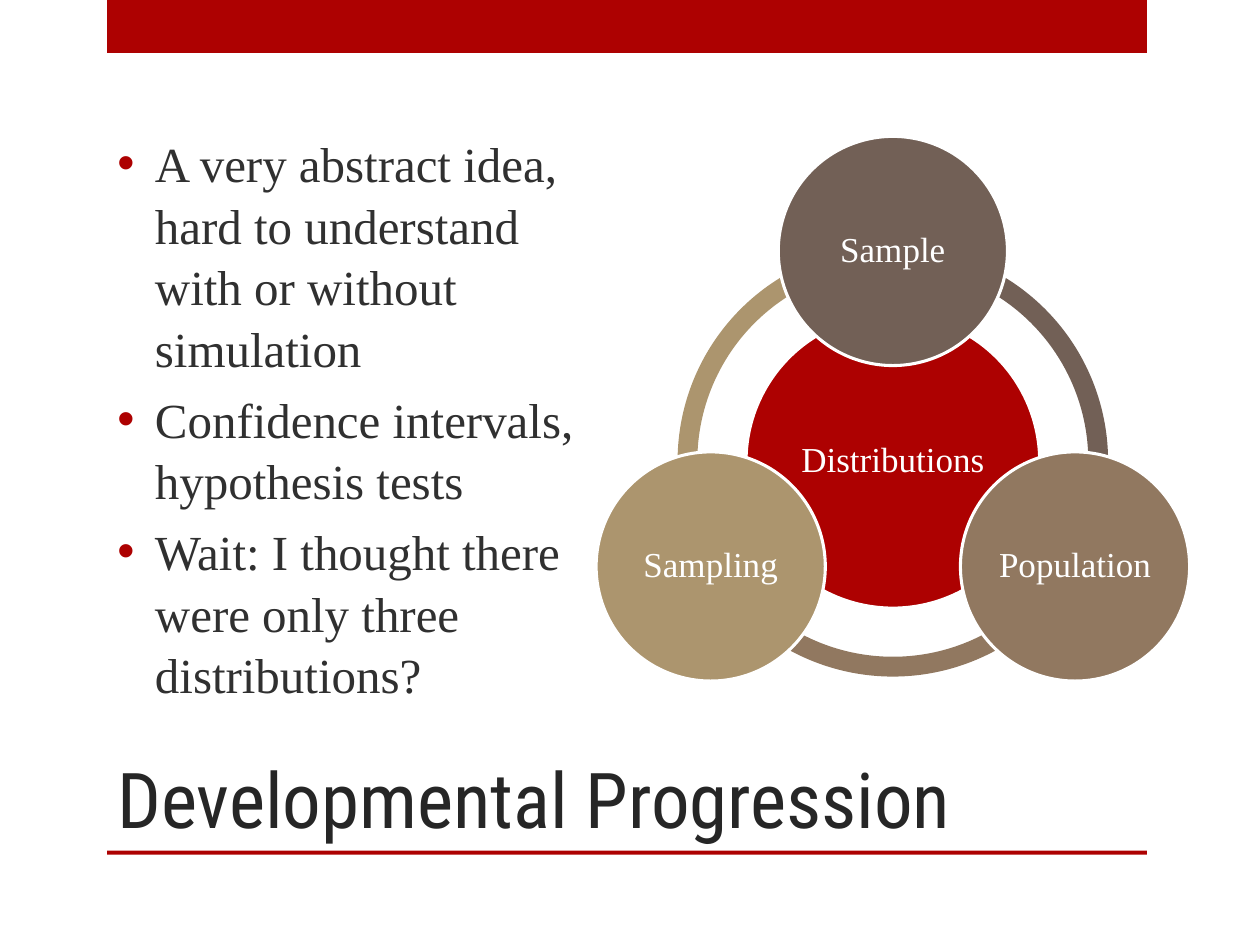
from dataclasses import dataclass
from math import cos, radians, sin

from lxml.etree import SubElement
from pptx import Presentation
from pptx.dml.color import RGBColor
from pptx.enum.shapes import MSO_SHAPE as Preset
from pptx.enum.text import MSO_ANCHOR as Anchor, MSO_AUTO_SIZE as AutoSize, PP_ALIGN as Align
from pptx.oxml.ns import qn
from pptx.util import Cm, Pt


@dataclass(frozen=True)
class Theme:
    accent: str = "AD0101"
    title: str = "262626"
    body: str = "303030"
    white: str = "FFFFFF"
    heading_font: str = "Roboto Condensed"
    text_font: str = "Times New Roman"
    title_size: int = 44
    body_size: int = 28
    label_size: int = 20
    outline: float = 1.75


@dataclass(frozen=True)
class Box:
    left: float
    top: float
    width: float
    height: float

    def lengths(self) -> tuple:
        return tuple(Cm(n) for n in (self.left, self.top, self.width, self.height))


@dataclass(frozen=True)
class Node:
    label: str
    color: str
    angle: int


THEME = Theme()
BARS = (Box(2.16, 0, 20.96, 1.07), Box(2.16, 17.15, 20.96, 0.08))
TITLE_BOX = Box(2.11, 12.7, 18.85, 4.44)
BODY_BOX = Box(2.11, 3.17, 10.16, 10.48)
BULLETS = (
    "A very abstract idea, hard to understand with or without simulation",
    "Confidence intervals, hypothesis tests",
    "Wait: I thought there were only three distributions?",
)
NODES = (
    Node("Sample", "726056", 270),
    Node("Population", "917860", 30),
    Node("Sampling", "AC956E", 150),
)
CENTER_X, CENTER_Y = 18.0, 9.3
RING_RADIUS, ORBIT_RADIUS, CORE_RADIUS, NODE_RADIUS = 4.34, 4.24, 2.96, 2.31
RING_THICKNESS = 0.046
ADJUSTMENT_PER_DEGREE = 0.6


def square(x: float, y: float, radius: float) -> Box:
    """Return the box around a circle."""
    return Box(x - radius, y - radius, 2 * radius, 2 * radius)


def add_span(para, text: str, font: str, size: int, color: str) -> None:
    """Add one formatted run."""
    span = para.add_run()
    span.text = text
    span.font.name = font
    span.font.size = Pt(size)
    span.font.color.rgb = RGBColor.from_string(color)


def add_solid(page, preset, box: Box, color: str):
    """Add a flat filled shape without an outline."""
    shape = page.shapes.add_shape(preset, *box.lengths())
    shape.shadow.inherit = False
    shape.fill.solid()
    shape.fill.fore_color.rgb = RGBColor.from_string(color)
    shape.line.fill.background()
    return shape


def add_arc(page, node: Node) -> None:
    """Add the ring section that runs clockwise from a node to the next."""
    arc = add_solid(page, Preset.BLOCK_ARC, square(CENTER_X, CENTER_Y, RING_RADIUS), node.color)
    arc.adjustments[0] = node.angle * ADJUSTMENT_PER_DEGREE
    arc.adjustments[1] = (node.angle + 360 // len(NODES)) % 360 * ADJUSTMENT_PER_DEGREE
    arc.adjustments[2] = RING_THICKNESS


def add_circle(page, label: str, color: str, box: Box) -> None:
    """Add a white-edged circle with a centred label."""
    circle = add_solid(page, Preset.OVAL, box, color)
    circle.line.color.rgb = RGBColor.from_string(THEME.white)
    circle.line.width = Pt(THEME.outline)
    frame = circle.text_frame
    frame.word_wrap = True
    frame.vertical_anchor = Anchor.MIDDLE
    frame.margin_left = frame.margin_right = frame.margin_top = frame.margin_bottom = Cm(0.07)
    para = frame.paragraphs[0]
    para.alignment = Align.CENTER
    para.line_spacing = 0.9
    add_span(para, label, THEME.text_font, THEME.label_size, THEME.white)


def place(holder, box: Box, anchor):
    """Move a placeholder and return its text frame."""
    holder.left, holder.top, holder.width, holder.height = box.lengths()
    frame = holder.text_frame
    frame.word_wrap = True
    frame.auto_size = AutoSize.NONE
    frame.vertical_anchor = anchor
    return frame


def set_bullet(para) -> None:
    """Give a paragraph a hanging accent-coloured bullet."""
    props = para._p.get_or_add_pPr()
    props.set("marL", str(Cm(0.76)))
    props.set("indent", str(-Cm(0.76)))
    color = SubElement(props, qn("a:buClr"))
    SubElement(color, qn("a:srgbClr"), val=THEME.accent)
    SubElement(props, qn("a:buFont"), typeface="Arial")
    SubElement(props, qn("a:buChar"), char="•")


def fill_text(page) -> None:
    """Write the title and the bullet list."""
    title = place(page.shapes.title, TITLE_BOX, Anchor.BOTTOM).paragraphs[0]
    title.alignment = Align.LEFT
    add_span(title, "Developmental Progression", THEME.heading_font, THEME.title_size, THEME.title)
    frame = place(page.placeholders[1], BODY_BOX, Anchor.MIDDLE)
    for index, text in enumerate(BULLETS):
        para = frame.add_paragraph() if index else frame.paragraphs[0]
        para.line_spacing = 1.05
        para.space_before = Pt(5)
        set_bullet(para)
        add_span(para, text, THEME.text_font, THEME.body_size, THEME.body)


def draw_cycle(page) -> None:
    """Draw the ring, the core and the three nodes."""
    for node in reversed(NODES):
        add_arc(page, node)
    add_circle(page, "Distributions", THEME.accent, square(CENTER_X, CENTER_Y, CORE_RADIUS))
    for node in NODES:
        x = CENTER_X + ORBIT_RADIUS * cos(radians(node.angle))
        y = CENTER_Y + ORBIT_RADIUS * sin(radians(node.angle))
        add_circle(page, node.label, node.color, square(x, y, NODE_RADIUS))


def main() -> None:
    """Build and save the deck."""
    deck = Presentation()
    deck.slide_width, deck.slide_height = Cm(25.4), Cm(19.05)
    page = deck.slides.add_slide(deck.slide_layouts[1])
    for bar in BARS:
        add_solid(page, Preset.RECTANGLE, bar, THEME.accent)
    fill_text(page)
    draw_cycle(page)
    deck.save("out.pptx")


if __name__ == "__main__":
    main()
